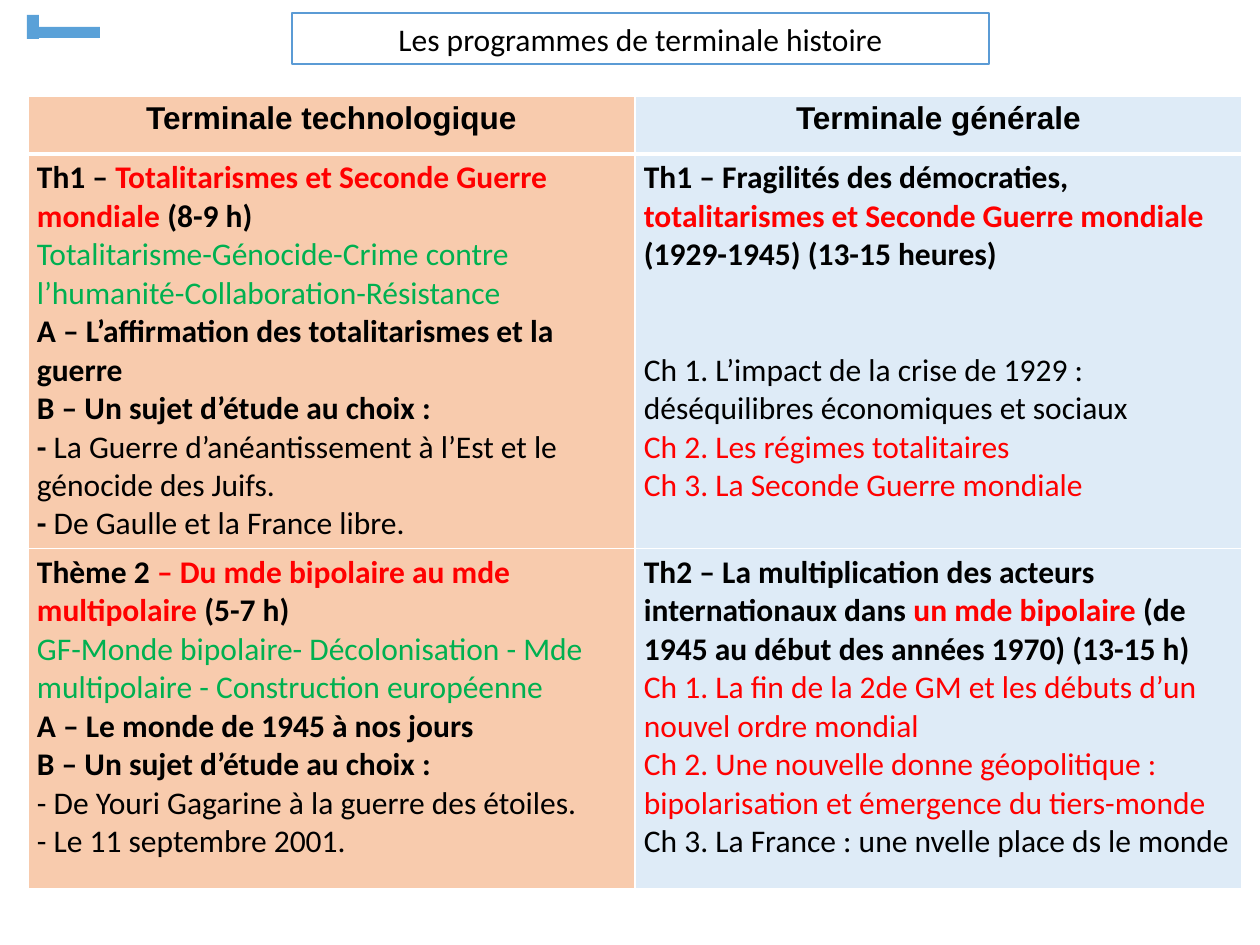
from lxml import etree
from pptx import Presentation
from pptx.dml.color import RGBColor
from pptx.enum.shapes import MSO_SHAPE
from pptx.enum.text import MSO_ANCHOR, PP_ALIGN
from pptx.oxml.ns import qn
from pptx.util import Pt

RECT = MSO_SHAPE.RECTANGLE
MIDDLE, TOP = MSO_ANCHOR.MIDDLE, MSO_ANCHOR.TOP
CENTER, LEFT = PP_ALIGN.CENTER, PP_ALIGN.LEFT
SCALE = 914400 / 126

COLORS = {
    "black": "000000", "red": "FF0000", "green": "00B050", "white": "FFFFFF",
    "blue": "5B9BD5", "mark": "5AA1D8", "peach": "F8CBAD", "sky": "DEEBF7",
}
# Text style: colour and bold
BOLD, PLAIN = ("black", True), ("black", False)
KEY, RED, GREEN = ("red", True), ("red", False), ("green", False)

TITLE = "Les programmes de terminale histoire"
TITLE_BOX = (292, 13, 697, 51)
MARKS = [(27, 15, 12, 24), (33, 27, 67, 11)]
TABLE_AT = (28, 96)
COL = 607
ROWS = [58, 387, 340]
FILLS = ["peach", "sky"]
GAP = 44  # points before the chapters that follow a short heading

HEADS = ["Terminale technologique", "Terminale générale"]
# One list of paragraphs per cell, each a list of (text, style) runs
THEMES = [
    [
        [
            [("Th1 – ", BOLD), ("Totalitarismes et Seconde Guerre mondiale", KEY),
             (" (8-9 h)", BOLD)],
            [("Totalitarisme-Génocide-Crime contre l’humanité-Collaboration-Résistance", GREEN)],
            [("A – L’affirmation des totalitarismes et la guerre", BOLD)],
            [("B – Un sujet d’étude au choix :", BOLD)],
            [("- ", BOLD),
             ("La Guerre d’anéantissement à l’Est et le génocide des Juifs.", PLAIN)],
            [("- ", BOLD), ("De Gaulle et la France libre.", PLAIN)],
        ],
        [
            [("Th1 – Fragilités des démocraties, ", BOLD),
             ("totalitarismes et Seconde Guerre mondiale ", KEY),
             ("(1929-1945) (13-15 heures)", BOLD)],
            [("Ch 1. L’impact de la crise de 1929 : "
              "déséquilibres économiques et sociaux", PLAIN)],
            [("Ch 2. Les régimes totalitaires", RED)],
            [("Ch 3. La Seconde Guerre mondiale", RED)],
        ],
    ],
    [
        [
            [("Thème 2 ", BOLD), ("– Du mde bipolaire au mde multipolaire ", KEY),
             ("(5-7 h)", BOLD)],
            [("GF-Monde bipolaire- Décolonisation - Mde multipolaire - "
              "Construction européenne", GREEN)],
            [("A – Le monde de 1945 à nos jours", BOLD)],
            [("B – Un sujet d’étude au choix :", BOLD)],
            [("- De Youri Gagarine à la guerre des étoiles.", PLAIN)],
            [("- Le 11 septembre 2001.", PLAIN)],
        ],
        [
            [("Th2 – La multiplication des acteurs internationaux dans ", BOLD),
             ("un mde bipolaire", KEY),
             (" (de 1945 au début des années 1970) (13-15 h)", BOLD)],
            [("Ch 1. La fin de la 2de GM et les débuts d’un nouvel ordre mondial", RED)],
            [("Ch 2. Une nouvelle donne géopolitique : "
              "bipolarisation et émergence du tiers-monde", RED)],
            [("Ch 3. La France : une nvelle place ds le monde", PLAIN)],
        ],
    ],
]


def px(*sizes):
    return [round(size * SCALE) for size in sizes]


def rgb(name):
    return RGBColor.from_string(COLORS[name])


def paint(shape, name):
    shape.shadow.inherit = False
    shape.fill.solid()
    shape.fill.fore_color.rgb = rgb(name)
    shape.line.fill.background()


def write(frame, paras, face="Calibri", align=LEFT):
    """Fill a text frame with paragraphs of styled runs."""
    frame.word_wrap = True
    for i, runs in enumerate(paras):
        para = frame.add_paragraph() if i else frame.paragraphs[0]
        para.alignment = align
        para.font.name, para.font.size = face, Pt(18)
        for text, (color, bold) in runs:
            run = para.add_run()
            run.text = text
            font = run.font if len(runs) > 1 else para.font
            font.bold = bold
            font.color.rgb = rgb(color)


def edge(cell, low):
    """Draw white cell borders, the lower one `low` points wide."""
    props = cell._tc.get_or_add_tcPr()
    for i, (side, width) in enumerate(zip("LRTB", (1, 1, 1, low))):
        line = etree.Element(qn(f"a:ln{side}"), w=str(Pt(width)))
        fill = etree.SubElement(line, qn("a:solidFill"))
        etree.SubElement(fill, qn("a:srgbClr"), val=COLORS["white"])
        props.insert(i, line)


prs = Presentation()
prs.slide_width, prs.slide_height = px(1260, 945)
slide = prs.slides.add_slide(prs.slide_layouts[6])

title = slide.shapes.add_shape(RECT, *px(*TITLE_BOX))
paint(title, "white")
title.line.color.rgb = rgb("blue")
title.line.width = Pt(1)
title.text_frame.vertical_anchor = MIDDLE
write(title.text_frame, [[(TITLE, PLAIN)]], align=CENTER)

table = slide.shapes.add_table(
    len(ROWS), len(HEADS), *px(*TABLE_AT, COL * len(HEADS), sum(ROWS))).table
table.horz_banding = False
for col in table.columns:
    col.width = px(COL)[0]
for row, high in zip(table.rows, px(*ROWS)):
    row.height = high

grid = [[[[(head, BOLD)]] for head in HEADS]] + THEMES
for r, line in enumerate(grid):
    for c, paras in enumerate(line):
        cell = table.cell(r, c)
        cell.fill.solid()
        cell.fill.fore_color.rgb = rgb(FILLS[c])
        cell.vertical_anchor = TOP
        cell.margin_left, cell.margin_right = px(9, 9)
        cell.margin_top, cell.margin_bottom = px(5, 5)
        edge(cell, 1 if r else 3)
        if r:
            write(cell.text_frame, paras)
        else:
            write(cell.text_frame, paras, "Arial", CENTER)
table.cell(1, 1).text_frame.paragraphs[1].space_before = Pt(GAP)

corner = slide.shapes.add_group_shape()
for box in MARKS:
    paint(corner.shapes.add_shape(RECT, *px(*box)), "mark")

prs.save("out.pptx")
